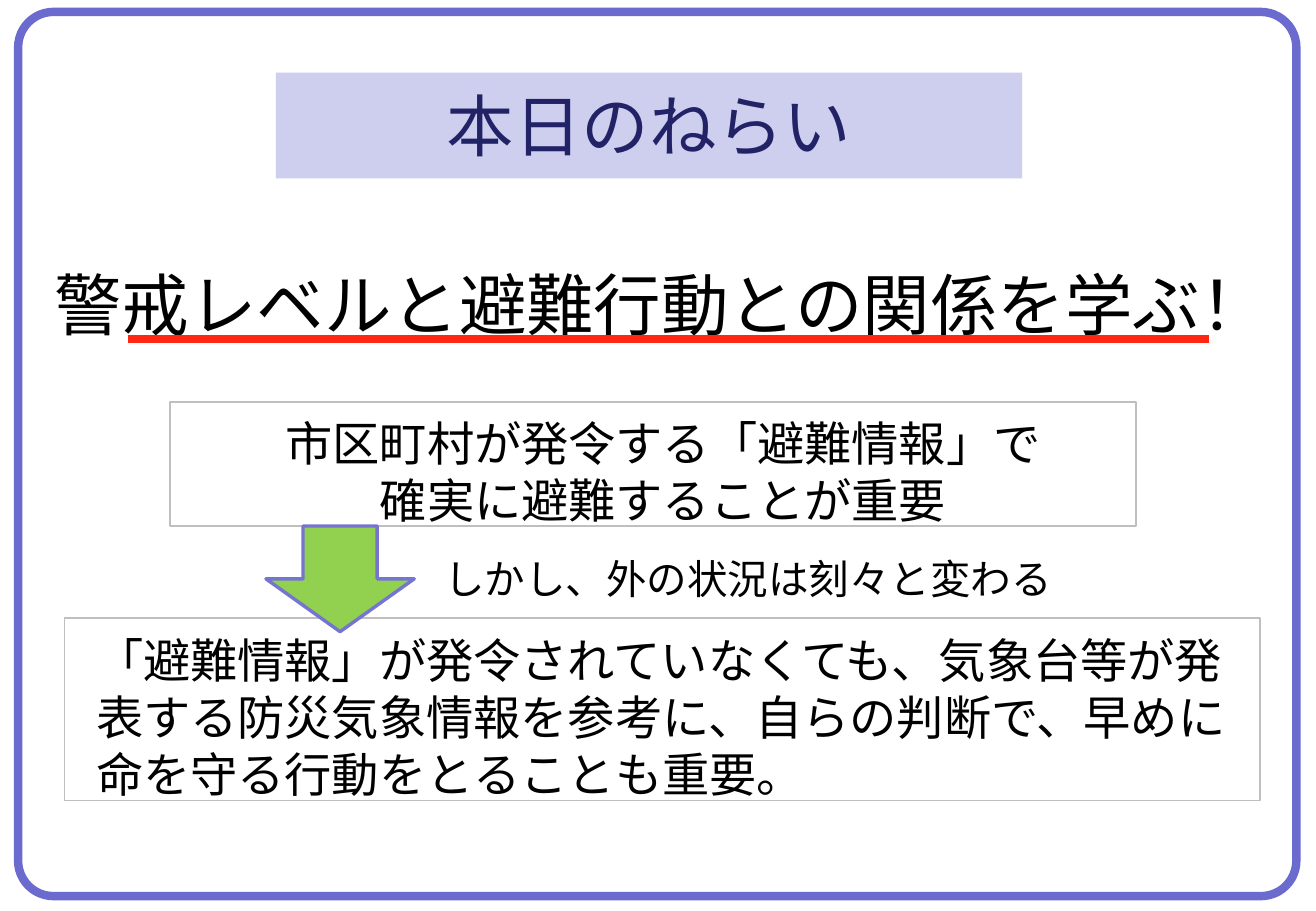
from dataclasses import dataclass

from lxml import etree
from pptx import Presentation
from pptx.dml.color import RGBColor
from pptx.enum.shapes import MSO_CONNECTOR, MSO_SHAPE
from pptx.enum.text import MSO_ANCHOR, PP_ALIGN
from pptx.oxml.ns import qn
from pptx.util import Cm, Pt

RECT, ROUND = MSO_SHAPE.RECTANGLE, MSO_SHAPE.ROUNDED_RECTANGLE
ARROW, STRAIGHT = MSO_SHAPE.DOWN_ARROW, MSO_CONNECTOR.STRAIGHT
MIDDLE, TOP = MSO_ANCHOR.MIDDLE, MSO_ANCHOR.TOP
LEFT, CENTER = PP_ALIGN.LEFT, PP_ALIGN.CENTER


@dataclass(frozen=True)
class Theme:
    font: str = "Noto Sans CJK JP"
    ink: str = "000000"
    navy: str = "222267"
    band: str = "CECEEF"
    frame: str = "6B6BCF"
    edge: str = "7575D1"
    grey: str = "BFBFBF"
    green: str = "92D050"
    red: str = "FF2712"
    head: int = 40
    body: int = 28
    note: int = 24


THEME = Theme()


def add_box(slide, kind, place, fill=None, line=None, width=1):
    """Add a preset shape; place is left, top, width, height in cm."""
    box = slide.shapes.add_shape(kind, *map(Cm, place))
    box.shadow.inherit = False
    if fill:
        box.fill.solid()
        box.fill.fore_color.rgb = RGBColor.from_string(fill)
    else:
        box.fill.background()
    if line:
        box.line.color.rgb = RGBColor.from_string(line)
        box.line.width = Pt(width)
    else:
        box.line.fill.background()
    return box


def add_label(slide, place):
    return slide.shapes.add_textbox(*map(Cm, place))


def add_rule(slide, left, right, y, color, width):
    rule = slide.shapes.add_connector(STRAIGHT, Cm(left), Cm(y), Cm(right), Cm(y))
    rule.line.color.rgb = RGBColor.from_string(color)
    rule.line.width = Pt(width)
    etree.SubElement(rule.element.spPr, qn("a:effectLst"))


def write(shape, lines, size, color=THEME.ink, align=LEFT, anchor=MIDDLE,
          inset=(0, 0, 0, 0), pitch=None):
    """Write one paragraph per line; inset is left, top, right, bottom in cm."""
    frame = shape.text_frame
    frame.word_wrap = True
    frame.vertical_anchor = anchor
    (frame.margin_left, frame.margin_top,
     frame.margin_right, frame.margin_bottom) = map(Cm, inset)
    for i, line in enumerate(lines):
        para = frame.paragraphs[0] if i == 0 else frame.add_paragraph()
        para.alignment = align
        if pitch:
            para.line_spacing = Pt(pitch)
        run = para.add_run()
        run.text = line
        run.font.size = Pt(size)
        run.font.color.rgb = RGBColor.from_string(color)
        run.font.name = THEME.font
        east = etree.SubElement(run.font._element, qn("a:ea"))
        east.set("typeface", THEME.font)


def main():
    deck = Presentation()
    deck.slide_width, deck.slide_height = Cm(27.51), Cm(19.05)
    slide = deck.slides.add_slide(deck.slide_layouts[6])

    # Aim of the day, underlined
    aim = add_label(slide, (1.14, 4.72, 25.6, 3.25))
    write(aim, ["警戒レベルと避難行動との関係を学ぶ！"], THEME.head)
    add_rule(slide, 2.67, 25.27, 7.09, THEME.red, 5)

    # Own judgement
    judge = add_box(slide, RECT, (1.35, 12.93, 24.99, 3.81), line=THEME.grey)
    write(judge, ["「避難情報」が発令されていなくても、気象台等が発表する防災気象情報を"
                  "参考に、自らの判断で、早めに命を守る行動をとることも重要。"],
          THEME.body, inset=(0.66, 0.3, 0, 0), pitch=33.6)

    # Title band and slide frame
    title = add_box(slide, RECT, (5.77, 1.52, 15.6, 2.21), fill=THEME.band)
    write(title, ["本日のねらい"], THEME.head, THEME.navy, CENTER,
          inset=(0, 0.12, 0, 0), pitch=43)
    border = add_box(slide, ROUND, (0.38, 0.25, 26.72, 18.49),
                     line=THEME.frame, width=5)
    border.adjustments[0] = 0.04

    # Official information
    notice = add_box(slide, RECT, (3.56, 8.41, 20.19, 2.59), line=THEME.grey)
    write(notice, ["市区町村が発令する「避難情報」で", "確実に避難することが重要"],
          THEME.body, align=CENTER, inset=(0.41, 0.3, 0, 0), pitch=33.6)

    # Arrow between the two boxes, with its remark
    add_box(slide, ARROW, (5.56, 11, 3.1, 2.21), THEME.green, THEME.edge, 2)
    remark = add_label(slide, (9.04, 11.38, 13.77, 1.3))
    write(remark, ["しかし、外の状況は刻々と変わる"], THEME.note, anchor=TOP,
          inset=(0.25, 0.13, 0.25, 0.13), pitch=31)

    deck.save("out.pptx")


if __name__ == "__main__":
    main()
